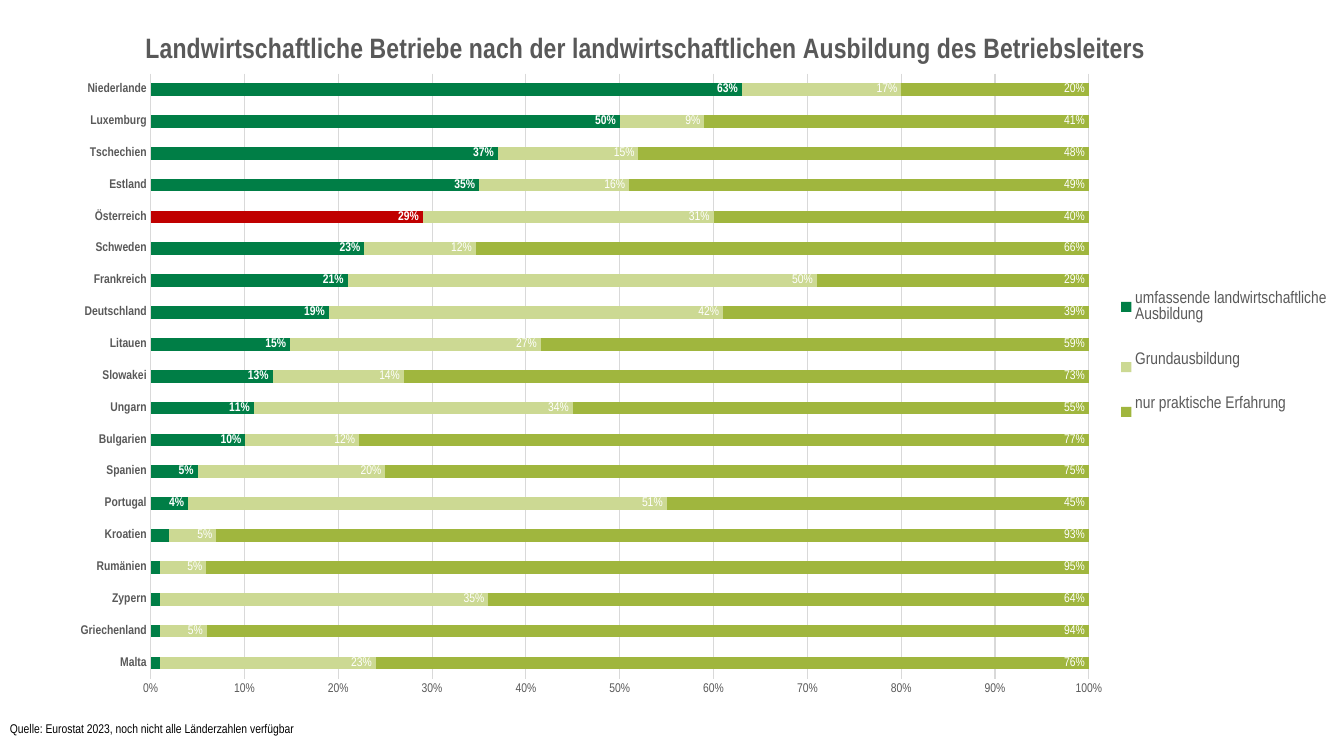
"""Build the slide on the training of farm managers by country."""
from lxml.etree import SubElement
from pptx import Presentation
from pptx.chart.data import CategoryChartData
from pptx.dml.color import RGBColor
from pptx.enum.chart import XL_CHART_TYPE, XL_LABEL_POSITION, XL_LEGEND_POSITION, XL_TICK_MARK
from pptx.enum.text import MSO_AUTO_SIZE
from pptx.oxml import parse_xml
from pptx.oxml.ns import nsdecls, qn
from pptx.util import Pt

COLORS = {
    "full": "007E46", "basic": "CCD993", "work": "A0B63E", "home": "C00000",
    "gray": "595959", "grid": "D9D9D9", "white": "FFFFFF", "black": "000000",
}
SERIES = {
    "umfassende landwirtschaftliche Ausbildung": "full",
    "Grundausbildung": "basic",
    "nur praktische Erfahrung": "work",
}
SHARES = {
    "Malta": (1, 23, 76),
    "Griechenland": (1, 5, 94),
    "Zypern": (1, 35, 64),
    "Rumänien": (1, 5, 95),
    "Kroatien": (2, 5, 93),
    "Portugal": (4, 51, 45),
    "Spanien": (5, 20, 75),
    "Bulgarien": (10, 12, 77),
    "Ungarn": (11, 34, 55),
    "Slowakei": (13, 14, 73),
    "Litauen": (15, 27, 59),
    "Deutschland": (19, 42, 39),
    "Frankreich": (21, 50, 29),
    "Schweden": (23, 12, 66),
    "Österreich": (29, 31, 40),
    "Estland": (35, 16, 49),
    "Tschechien": (37, 15, 48),
    "Luxemburg": (50, 9, 41),
    "Niederlande": (63, 17, 20),
}


class Painter:
    """Holds the style and the current slide."""

    def __init__(self, slide, face="Arial Narrow"):
        self.slide = slide
        self.face = face

    def color(self, name):
        return RGBColor.from_string(COLORS[name])

    def font(self, font, size, color, bold=False):
        font.name, font.size, font.bold = self.face, Pt(size), bold
        font.color.rgb = self.color(color)

    def fill(self, part, color):
        part.format.fill.solid()
        part.format.fill.fore_color.rgb = self.color(color)

    def line(self, part):
        part.format.line.width = Pt(0.75)
        part.format.line.color.rgb = self.color("grid")

    def place(self, element, index, **values):
        """Give a chart part a fixed place, as shares of the chart."""
        for old in element.findall(qn("c:layout")):
            element.remove(old)
        layout = parse_xml(f"<c:layout {nsdecls('c')}/>")
        manual = SubElement(layout, qn("c:manualLayout"))
        for tag, value in values.items():
            SubElement(manual, qn(f"c:{tag}")).set("val", str(value))
        element.insert(index, layout)

    def text(self, text, left, top, width, height, size):
        box = self.slide.shapes.add_textbox(Pt(left), Pt(top), Pt(width), Pt(height))
        frame = box.text_frame
        frame.word_wrap = False
        frame.auto_size = MSO_AUTO_SIZE.SHAPE_TO_FIT_TEXT
        frame.text = text
        self.font(frame.paragraphs[0].font, size, "black")

    def chart(self, title, left, top, width, height):
        data = CategoryChartData(number_format="0%")
        data.categories = list(SHARES)
        for name, column in zip(SERIES, zip(*SHARES.values())):
            data.add_series(name, [share / 100 for share in column])
        chart = self.slide.shapes.add_chart(
            XL_CHART_TYPE.BAR_STACKED_100, Pt(left), Pt(top), Pt(width), Pt(height), data
        ).chart
        chart.font.name, chart.font.size = "Arial", Pt(10)
        self.title(chart, title)
        self.axes(chart)
        self.bars(chart.plots[0])
        self.legend(chart)
        area = chart.plots[0]._element.getparent()
        self.place(area, 0, layoutTarget="inner", xMode="edge", yMode="edge",
                   x=0.068, y=0.075, w=0.733, h=0.882)

    def title(self, chart, text):
        chart.has_title = True
        title = chart.chart_title
        title.text_frame.text = text
        self.font(title.text_frame.paragraphs[0].font, 20, "gray", True)
        title.include_in_layout = False
        self.place(title._element, 1, xMode="edge", yMode="edge", x=0.06, y=0.01)

    def axes(self, chart):
        names, scale = chart.category_axis, chart.value_axis
        for axis in (names, scale):
            axis.major_tick_mark = axis.minor_tick_mark = XL_TICK_MARK.NONE
            self.font(axis.tick_labels.font, 9, "gray", axis is names)
        self.line(names)
        scale.maximum_scale, scale.minimum_scale, scale.major_unit = 1, 0, 0.1
        scale.tick_labels.number_format = "0%"
        scale.tick_labels.number_format_is_linked = False
        scale.format.line.fill.background()
        scale.has_major_gridlines = True
        self.line(scale.major_gridlines)

    def bars(self, plot):
        plot.gap_width, plot.overlap, plot.vary_by_categories = 150, 100, False
        for series in plot.series:
            color = SERIES[series.name]
            self.fill(series, color)
            labels = series.data_labels
            labels.show_value = True
            labels.position = XL_LABEL_POSITION.INSIDE_END
            labels.number_format, labels.number_format_is_linked = "0%", False
            self.font(labels.font, 9, "white", color == "full")
        first = plot.series[0]
        self.fill(first.points[list(SHARES).index("Österreich")], "home")
        small = [i for i, row in enumerate(SHARES.values()) if row[0] < 4]
        for i in small:
            first.data_labels._element.insert(i, parse_xml(
                f'<c:dLbl {nsdecls("c")}><c:idx val="{i}"/><c:delete val="1"/></c:dLbl>'))

    def legend(self, chart):
        chart.has_legend = True
        legend = chart.legend
        legend.position = XL_LEGEND_POSITION.RIGHT
        legend.include_in_layout = False
        self.font(legend.font, 12, "gray")
        self.place(legend._element, 1, xMode="edge", yMode="edge",
                   x=0.813, y=0.35, w=0.187, h=0.26)


def main():
    deck = Presentation()
    deck.slide_width, deck.slide_height = Pt(960), Pt(540)
    paint = Painter(deck.slides.add_slide(deck.slide_layouts[6]))
    paint.chart("Landwirtschaftliche Betriebe nach der landwirtschaftlichen "
                "Ausbildung des Betriebsleiters", 45.4, 15.8, 914.4, 490.3)
    paint.text("Quelle: Eurostat 2023, noch nicht alle Länderzahlen verfügbar",
               0, 511.2, 221.8, 18, 9)
    deck.save("out.pptx")


if __name__ == "__main__":
    main()
